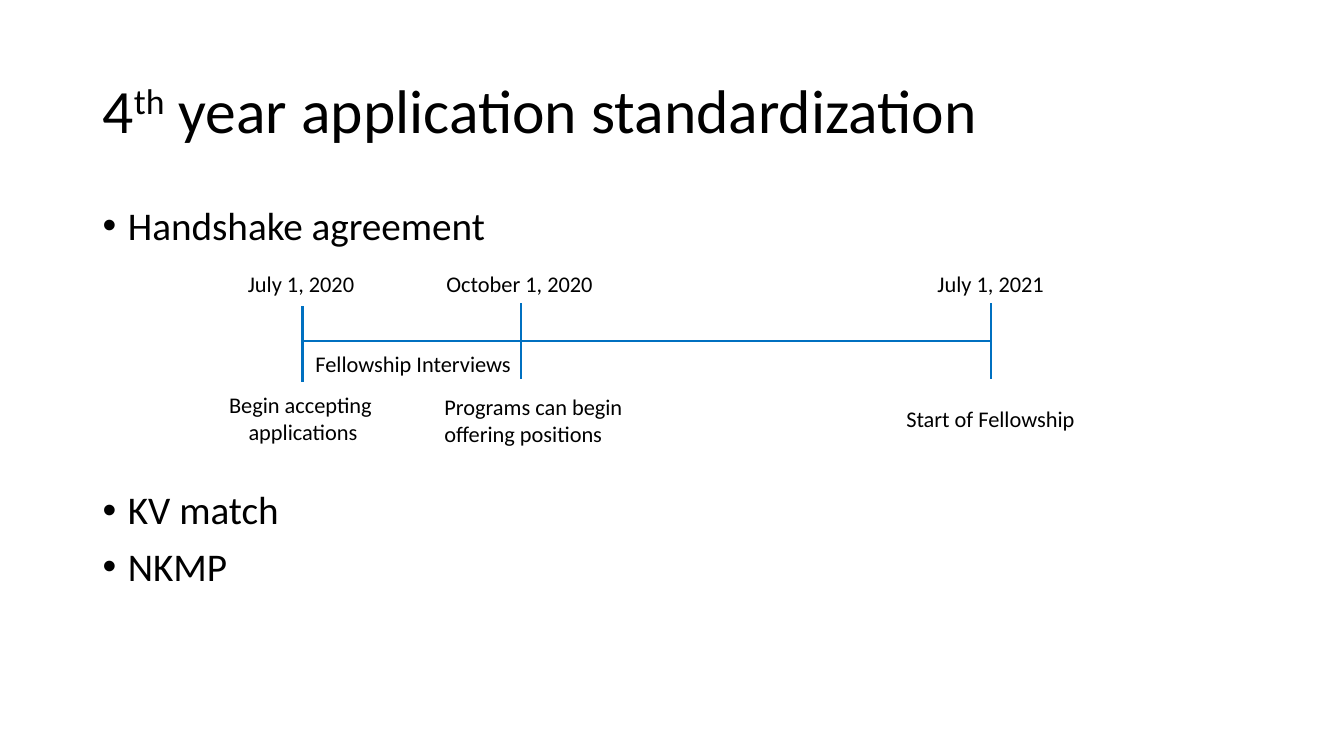
from dataclasses import dataclass

from lxml import etree
from pptx import Presentation
from pptx.dml.color import RGBColor
from pptx.enum import shapes, text
from pptx.oxml import ns
from pptx.util import Inches, Pt


@dataclass(frozen=True)
class Theme:
    font: str = "Calibri"
    ink: RGBColor = RGBColor(0, 0, 0)
    rule: RGBColor = RGBColor(0x00, 0x70, 0xC0)
    title: Pt = Pt(44)
    bullet: Pt = Pt(28)
    label: Pt = Pt(16)
    rule_width: Pt = Pt(1.5)


THEME = Theme()
AXIS_Y = 3.38
TICK_LENGTH = 0.75
BULLET_GAP = 10
TIMELINE_GAP = 173  # room between the bullets for the timeline

# x and top of each tick
TICKS = [(3, 3.04), (5.17, 3.01), (9.83, 3.01)]
# left, top, width, height, lines, alignment
LEFT, CENTER = text.PP_ALIGN.LEFT, text.PP_ALIGN.CENTER
LABELS = [
    (2.36, 2.63, 1.27, 0.37, ["July 1, 2020"], LEFT),
    (4.33, 2.63, 1.67, 0.37, ["October 1, 2020"], LEFT),
    (9.2, 2.63, 1.27, 0.37, ["July 1, 2021"], LEFT),
    (3.03, 3.42, 2.17, 0.37, ["Fellowship Interviews"], LEFT),
    (2.16, 3.83, 1.69, 0.64, ["Begin accepting ", "applications"], CENTER),
    (4.31, 3.85, 2.02, 0.64, ["Programs can begin", "offering positions"], LEFT),
    (8.89, 3.97, 1.89, 0.37, ["Start of Fellowship"], LEFT),
]
BULLETS = [
    ("Handshake agreement", BULLET_GAP),
    ("KV match", TIMELINE_GAP),
    ("NKMP", BULLET_GAP),
]


def add_frame(slide, left, top, width, height, wrap=True):
    box = slide.shapes.add_textbox(*map(Inches, (left, top, width, height)))
    box.text_frame.word_wrap = wrap
    return box.text_frame


def add_paragraph(frame, index, size):
    paragraph = frame.add_paragraph() if index else frame.paragraphs[0]
    paragraph.font.name = THEME.font
    paragraph.font.size = size
    paragraph.font.color.rgb = THEME.ink
    return paragraph


def add_title(slide):
    frame = add_frame(slide, 0.92, 0.4, 11.5, 1.45)
    frame.vertical_anchor = text.MSO_ANCHOR.MIDDLE
    title = add_paragraph(frame, 0, THEME.title)
    title.line_spacing = 0.9
    for words in ("4", "th", " year application standardization"):
        run = title.add_run()
        run.text = words
        if words == "th":
            run.font._element.set("baseline", "30000")


def add_bullets(slide):
    frame = add_frame(slide, 0.92, 2, 11.5, 4.76)
    for index, (words, gap) in enumerate(BULLETS):
        bullet = add_paragraph(frame, index, THEME.bullet)
        bullet.text = words
        bullet.line_spacing = 0.9
        bullet.space_before = Pt(gap)
        properties = bullet._p.get_or_add_pPr()
        properties.set("marL", str(Inches(0.25)))
        properties.set("indent", str(-Inches(0.25)))
        mark_font = etree.Element(ns.qn("a:buFont"), typeface="Arial")
        mark = etree.Element(ns.qn("a:buChar"), char="•")
        properties.find(ns.qn("a:spcBef")).addnext(mark_font)
        mark_font.addnext(mark)


def add_rule(slide, *ends):
    rule = slide.shapes.add_connector(
        shapes.MSO_CONNECTOR.STRAIGHT, *map(Inches, ends))
    rule.line.color.rgb = THEME.rule
    rule.line.width = THEME.rule_width
    etree.SubElement(rule._element.spPr, ns.qn("a:effectLst"))


def add_label(slide, left, top, width, height, lines, alignment):
    frame = add_frame(slide, left, top, width, height, wrap=False)
    for index, words in enumerate(lines):
        line = add_paragraph(frame, index, THEME.label)
        line.text = words
        line.alignment = alignment


def add_timeline(slide):
    add_rule(slide, TICKS[0][0], AXIS_Y, TICKS[-1][0], AXIS_Y)
    for x, top in TICKS:
        add_rule(slide, x, top, x, top + TICK_LENGTH)
    for label in LABELS:
        add_label(slide, *label)


def main():
    deck = Presentation()
    deck.slide_width = Inches(13.33)
    deck.slide_height = Inches(7.5)
    slide = deck.slides.add_slide(deck.slide_layouts[6])
    add_title(slide)
    add_bullets(slide)
    add_timeline(slide)
    deck.save("out.pptx")


if __name__ == "__main__":
    main()
